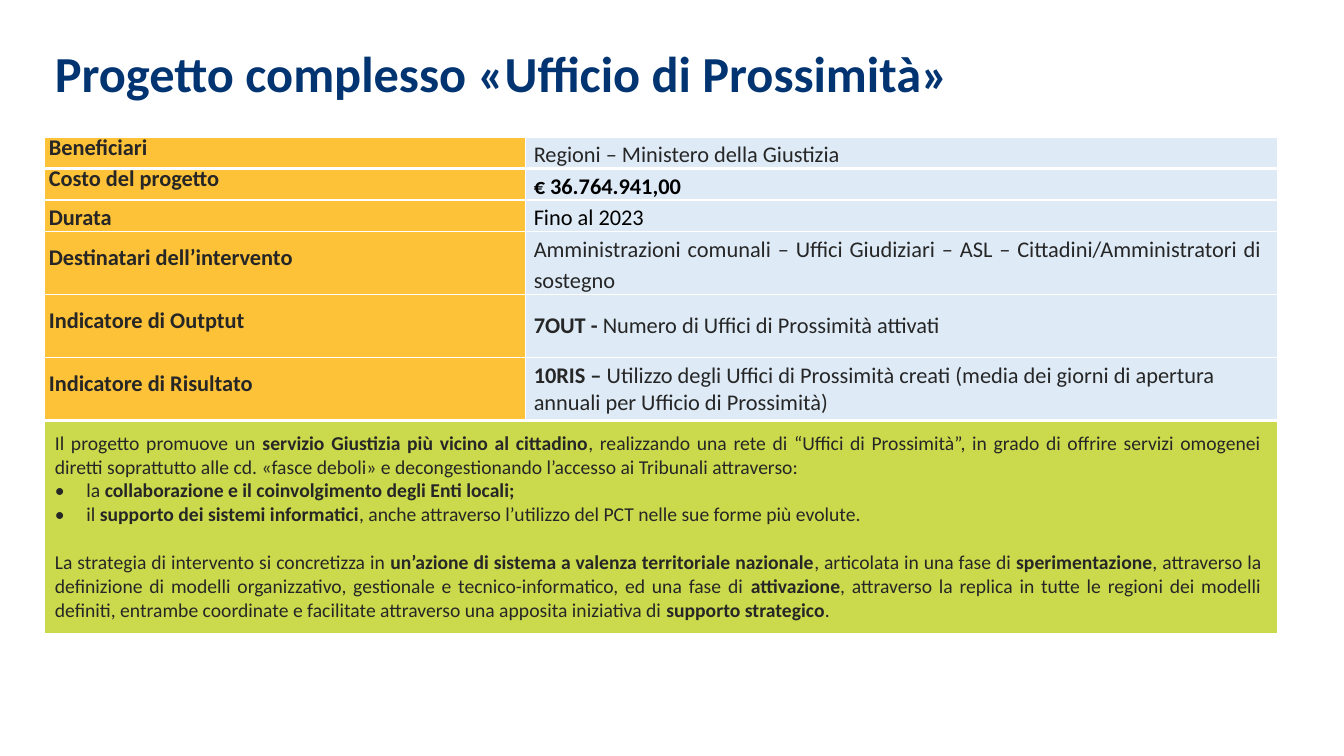
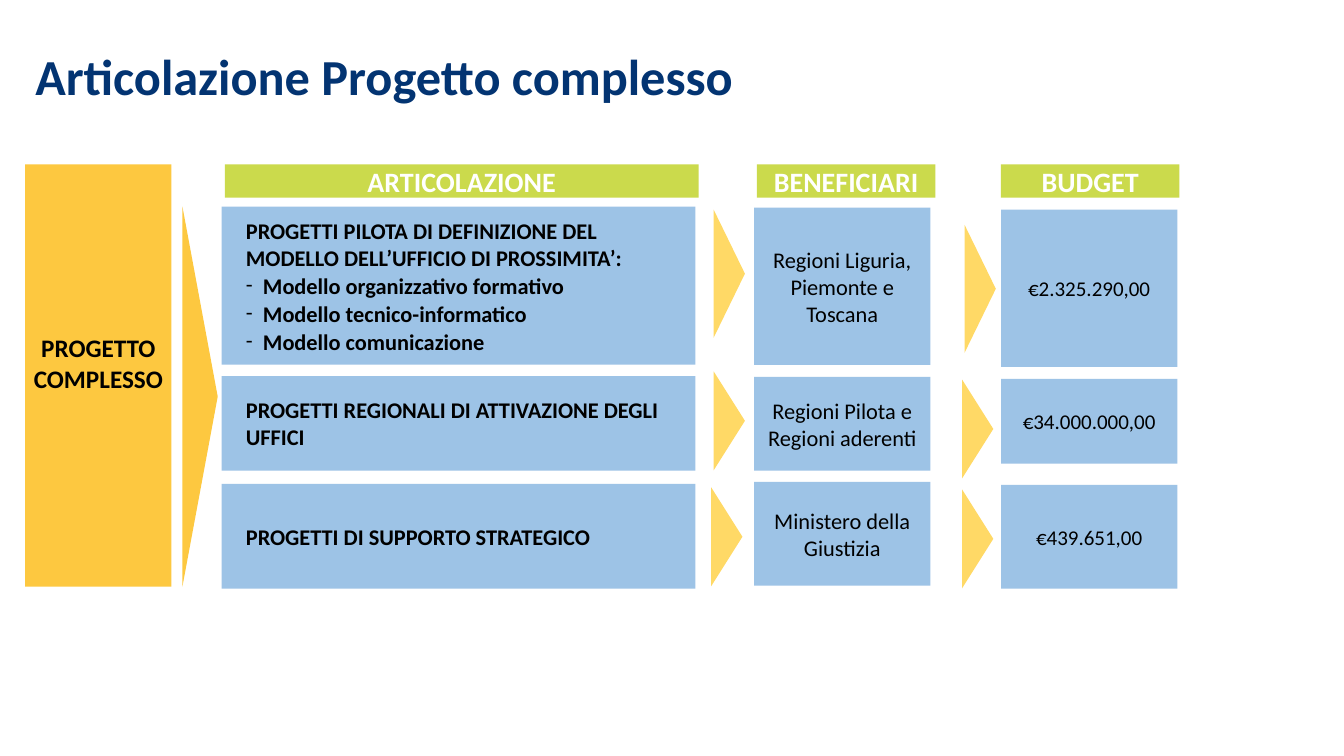
from lxml.etree import SubElement
from pptx import Presentation
from pptx.dml.color import RGBColor
from pptx.enum.shapes import MSO_SHAPE as Shape
from pptx.enum.text import MSO_ANCHOR as Anchor, MSO_AUTO_SIZE as AutoSize, PP_ALIGN as Align
from pptx.oxml.ns import qn
from pptx.util import Pt

NAVY = RGBColor(0x03, 0x34, 0x72)
ORANGE = RGBColor(0xFD, 0xC2, 0x37)
AMBER = RGBColor(0xFD, 0xC8, 0x40)
YELLOW = RGBColor(0xFF, 0xD9, 0x66)
LIME = RGBColor(0xCB, 0xDA, 0x4C)
PALE_BLUE = RGBColor(0xDE, 0xEB, 0xF7)
SKY_BLUE = RGBColor(0x9D, 0xC3, 0xE6)
DARK_GREY = RGBColor(0x26, 0x26, 0x26)
BLACK = RGBColor(0, 0, 0)
WHITE = RGBColor(0xFF, 0xFF, 0xFF)
FONT = "Calibri"


def write_paragraph(paragraph, text, size, color, align, bullet=None, margin=0, hanging=0):
    properties = paragraph._p.get_or_add_pPr()
    properties.set("marL", str(Pt(margin)))
    properties.set("indent", str(-Pt(hanging)))
    if bullet:
        SubElement(properties, qn("a:buFont"), typeface=FONT)
        SubElement(properties, qn("a:buChar"), char=bullet)
    paragraph.alignment = align
    for index, piece in enumerate(text.split("**")):
        if piece:
            run = paragraph.add_run()
            run.text = piece
            run.font.name = FONT
            run.font.size = Pt(size)
            run.font.bold = index % 2 == 1
            run.font.color.rgb = color


def add_block(slide, kind, left, top, width, height, color):
    shape = slide.shapes.add_shape(kind, Pt(left), Pt(top), Pt(width), Pt(height))
    shape.shadow.inherit = False
    shape.fill.solid()
    shape.fill.fore_color.rgb = color
    shape.line.fill.background()
    frame = shape.text_frame
    frame.word_wrap = True
    frame.vertical_anchor = Anchor.MIDDLE
    frame.margin_left = frame.margin_right = frame.margin_top = frame.margin_bottom = 0
    return shape


presentation = Presentation()
presentation.slide_width = Pt(960)
presentation.slide_height = Pt(540)

titles = [
    ("Progetto complesso «Ufficio di Prossimità»", 32, 20),
    ("Articolazione Progetto complesso", 18, 22),
]
for text, left, top in titles:
    slide = presentation.slides.add_slide(presentation.slide_layouts[5])
    title = slide.shapes.title
    title.left, title.top, title.width, title.height = Pt(left), Pt(top), Pt(808), Pt(63)
    frame = title.text_frame
    frame.auto_size = AutoSize.NONE
    frame.vertical_anchor = Anchor.MIDDLE
    write_paragraph(frame.paragraphs[0], f"**{text}**", 36, NAVY, Align.LEFT)
project_slide, structure_slide = presentation.slides

TIGHT = Pt(12.1)
project_rows = [
    ("Beneficiari", TIGHT, "Regioni – Ministero della Giustizia", DARK_GREY, Align.JUSTIFY, 1.15, 22.4),
    ("Costo del progetto", TIGHT, "**€ 36.764.941,00**", BLACK, Align.JUSTIFY, 1.15, 22.4),
    ("Durata", 1.15, "Fino al 2023", BLACK, Align.JUSTIFY, 1.15, 22.4),
    ("Destinatari dell’intervento", TIGHT,
     "Amministrazioni comunali – Uffici Giudiziari – ASL – Cittadini/Amministratori di sostegno",
     DARK_GREY, Align.JUSTIFY, 1.15, 45),
    ("Indicatore di Outptut", TIGHT, "**7OUT -** Numero di Uffici di Prossimità attivati",
     DARK_GREY, Align.JUSTIFY, 1, 45),
    ("Indicatore di Risultato", TIGHT,
     "**10RIS –** Utilizzo degli Uffici di Prossimità creati (media dei giorni di apertura "
     "annuali per Ufficio di Prossimità)", DARK_GREY, Align.LEFT, 1, 45),
]
description = [
    ("Il progetto promuove un **servizio Giustizia più vicino al cittadino**, realizzando una rete di "
     "“Uffici di Prossimità”, in grado di offrire servizi omogenei diretti soprattutto alle cd. "
     "«fasce deboli» e decongestionando l’accesso ai Tribunali attraverso:", None, 7.2, 0, 0),
    ("la **collaborazione e il coinvolgimento degli Enti locali;**", "•", 29.7, 22.5, 0),
    ("il **supporto dei sistemi informatici**, anche attraverso l’utilizzo del PCT nelle sue forme "
     "più evolute.", "•", 29.7, 22.5, 0),
    ("La strategia di intervento si concretizza in **un’azione di sistema a valenza territoriale "
     "nazionale**, articolata in una fase di **sperimentazione**, attraverso la definizione di modelli "
     "organizzativo, gestionale e tecnico-informatico, ed una fase di **attivazione**, attraverso la "
     "replica in tutte le regioni dei modelli definiti, entrambe coordinate e facilitate attraverso una "
     "apposita iniziativa di **supporto strategico**.", None, 7.2, 0, 17),
]
heights = [row[-1] for row in project_rows] + [152]
table = project_slide.shapes.add_table(
    len(heights), 2, Pt(32), Pt(97.9), Pt(880.5), Pt(sum(heights))).table
table.first_row = False
table.horz_banding = False
table.columns[0].width = Pt(343.5)
table.columns[1].width = Pt(537)
for row, height in zip(table.rows, heights):
    row.height = Pt(height)

thick_rules = (1, 6)
for row_index in range(len(heights)):
    for column_index, color in enumerate((ORANGE, PALE_BLUE)):
        cell = table.cell(row_index, column_index)
        cell.vertical_anchor = Anchor.MIDDLE
        cell.margin_top = cell.margin_bottom = 0
        cell.margin_left = Pt(5.8 * column_index)
        cell.margin_right = Pt(11.5 * column_index)
        top_width = 3 if row_index in thick_rules else 1
        bottom_width = 3 if row_index + 1 in thick_rules else 1
        for side, width in (("L", 1), ("R", 1), ("T", top_width), ("B", bottom_width)):
            line = SubElement(cell._tc.get_or_add_tcPr(), qn(f"a:ln{side}"), w=str(Pt(width)))
            line_fill = SubElement(line, qn("a:solidFill"))
            SubElement(line_fill, qn("a:srgbClr"), val=str(WHITE))
        cell.fill.solid()
        cell.fill.fore_color.rgb = color

for row_index, (label, label_spacing, text, color, align, spacing, height) in enumerate(project_rows):
    label_paragraph = table.cell(row_index, 0).text_frame.paragraphs[0]
    write_paragraph(label_paragraph, f"**{label}**", 16, DARK_GREY, Align.JUSTIFY, margin=2.9)
    label_paragraph.line_spacing = label_spacing
    value_paragraph = table.cell(row_index, 1).text_frame.paragraphs[0]
    write_paragraph(value_paragraph, text, 16, color, align)
    value_paragraph.line_spacing = spacing

description_cell = table.cell(len(project_rows), 0)
description_cell.merge(table.cell(len(project_rows), 1))
description_cell.margin_right = Pt(11.5)
description_cell.fill.fore_color.rgb = LIME
for index, (text, bullet, margin, hanging, space) in enumerate(description):
    frame = description_cell.text_frame
    paragraph = frame.add_paragraph() if index else frame.paragraphs[0]
    write_paragraph(paragraph, text, 14, DARK_GREY, Align.JUSTIFY, bullet, margin, hanging)
    paragraph.space_before = Pt(space)

project_box = add_block(structure_slide, Shape.RECTANGLE, 18, 117.4, 104.5, 301.7, AMBER)
project_box.text_frame.margin_bottom = Pt(18)
write_paragraph(project_box.text_frame.paragraphs[0], "**PROGETTO COMPLESSO**", 18, BLACK, Align.CENTER)

headers = [("ARTICOLAZIONE", 160.6, 338.4), ("BENEFICIARI", 540.7, 127.5), ("BUDGET", 715, 127.5)]
for text, left, width in headers:
    header = add_block(structure_slide, Shape.RECTANGLE, left, 117.4, width, 23.8, LIME)
    write_paragraph(header.text_frame.paragraphs[0], f"**{text}**", 20, WHITE, Align.CENTER)

columns = [
    (158.4, 338.4, 17.3, 16, Align.LEFT, [
        (147.6, 113, ["**PROGETTI PILOTA DI DEFINIZIONE DEL MODELLO DELL’UFFICIO DI PROSSIMITA’:**",
                      "**Modello organizzativo formativo**",
                      "**Modello tecnico-informatico**",
                      "**Modello comunicazione**"]),
        (268.6, 67.7, ["**PROGETTI REGIONALI DI ATTIVAZIONE DEGLI UFFICI**"]),
        (345.6, 74.9, ["**PROGETTI DI SUPPORTO STRATEGICO**"])]),
    (538.6, 126, 8.6, 16, Align.CENTER, [
        (148.3, 112.3, ["Regioni Liguria, Piemonte e Toscana"]),
        (269.3, 67, ["Regioni Pilota e Regioni aderenti"]),
        (344.2, 74.2, ["Ministero della Giustizia"])]),
    (715, 126, 8.6, 15, Align.CENTER, [
        (149.8, 112.3, ["€2.325.290,00"]),
        (270.7, 60.5, ["€34.000.000,00"]),
        (346.3, 74.2, ["€439.651,00"])]),
]
for left, width, margin, size, align, boxes in columns:
    for top, height, texts in boxes:
        box = add_block(structure_slide, Shape.RECTANGLE, left, top, width, height, SKY_BLUE)
        frame = box.text_frame
        frame.margin_left, frame.margin_right = Pt(margin), Pt(8.6)
        write_paragraph(frame.paragraphs[0], texts[0], size, BLACK, align)
        for text in texts[1:]:
            paragraph = frame.add_paragraph()
            write_paragraph(paragraph, text, size, BLACK, align, "-", 12.2, 12.2)
            paragraph.space_before = Pt(0.8)

arrows = [
    (130.3, 147.6, 25.2, 271.4, AMBER),
    (509.8, 149.8, 22.3, 91.4, YELLOW),
    (509.8, 265.3, 22.3, 70.6, YELLOW),
    (508, 348.1, 22.3, 70.6, YELLOW),
    (689, 160.6, 22.3, 91.4, YELLOW),
    (687.2, 271.1, 22.3, 70.6, YELLOW),
    (687.2, 349.6, 22.3, 70.6, YELLOW),
]
for left, top, depth, span, color in arrows:
    shift = (span - depth) / 2
    arrow = add_block(structure_slide, Shape.ISOSCELES_TRIANGLE,
                      left - shift, top + shift, span, depth, color)
    arrow.rotation = 90

presentation.save("out.pptx")
